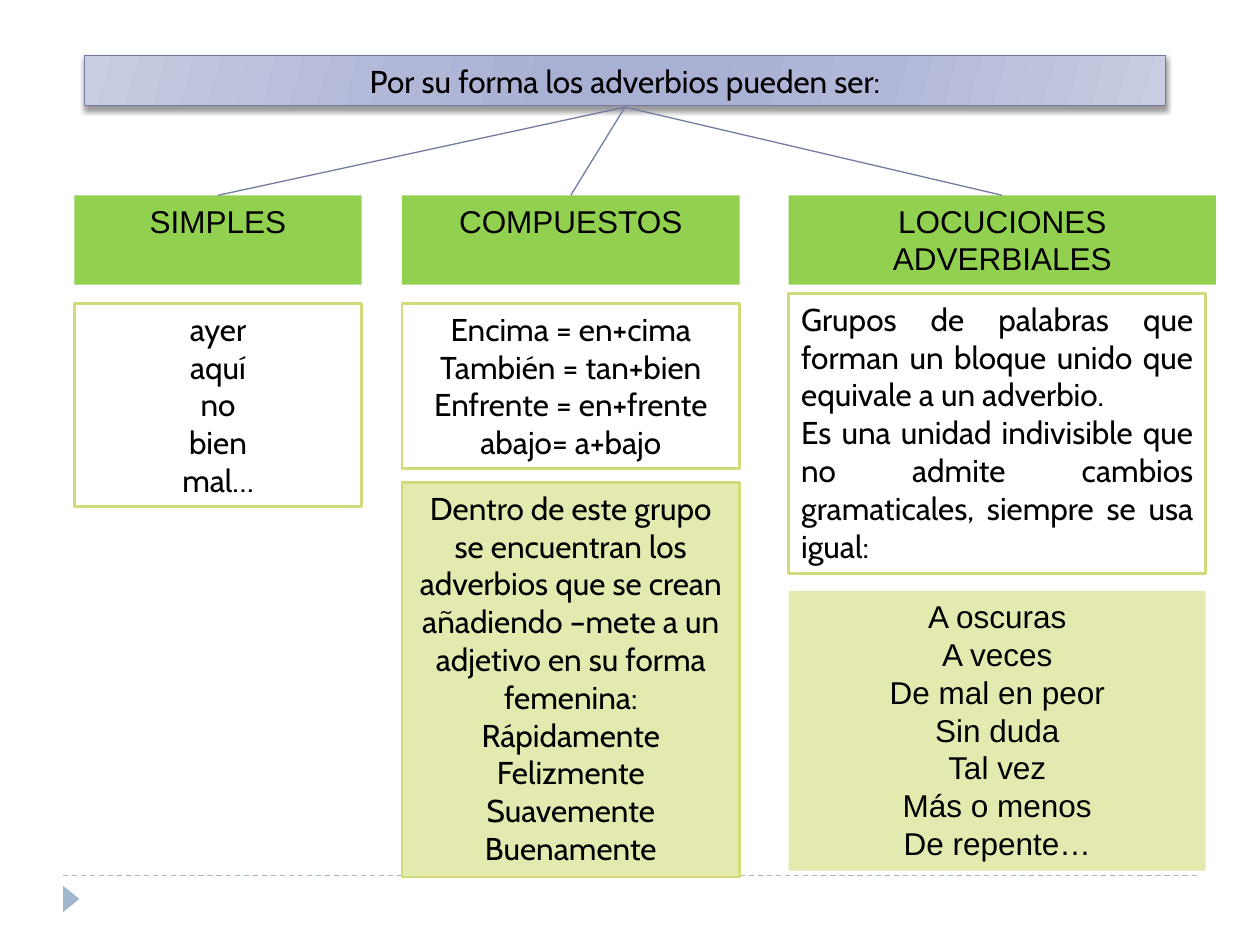
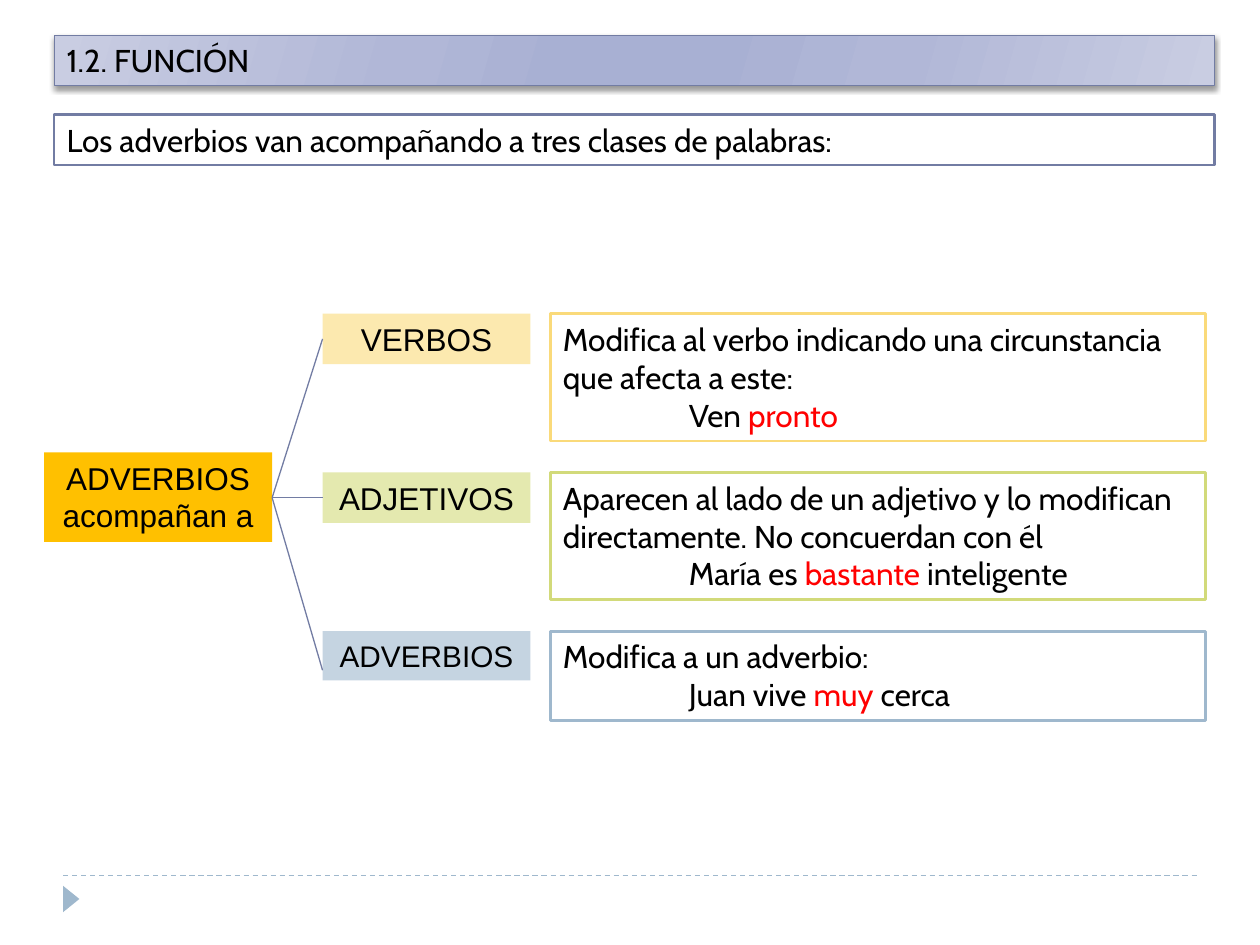
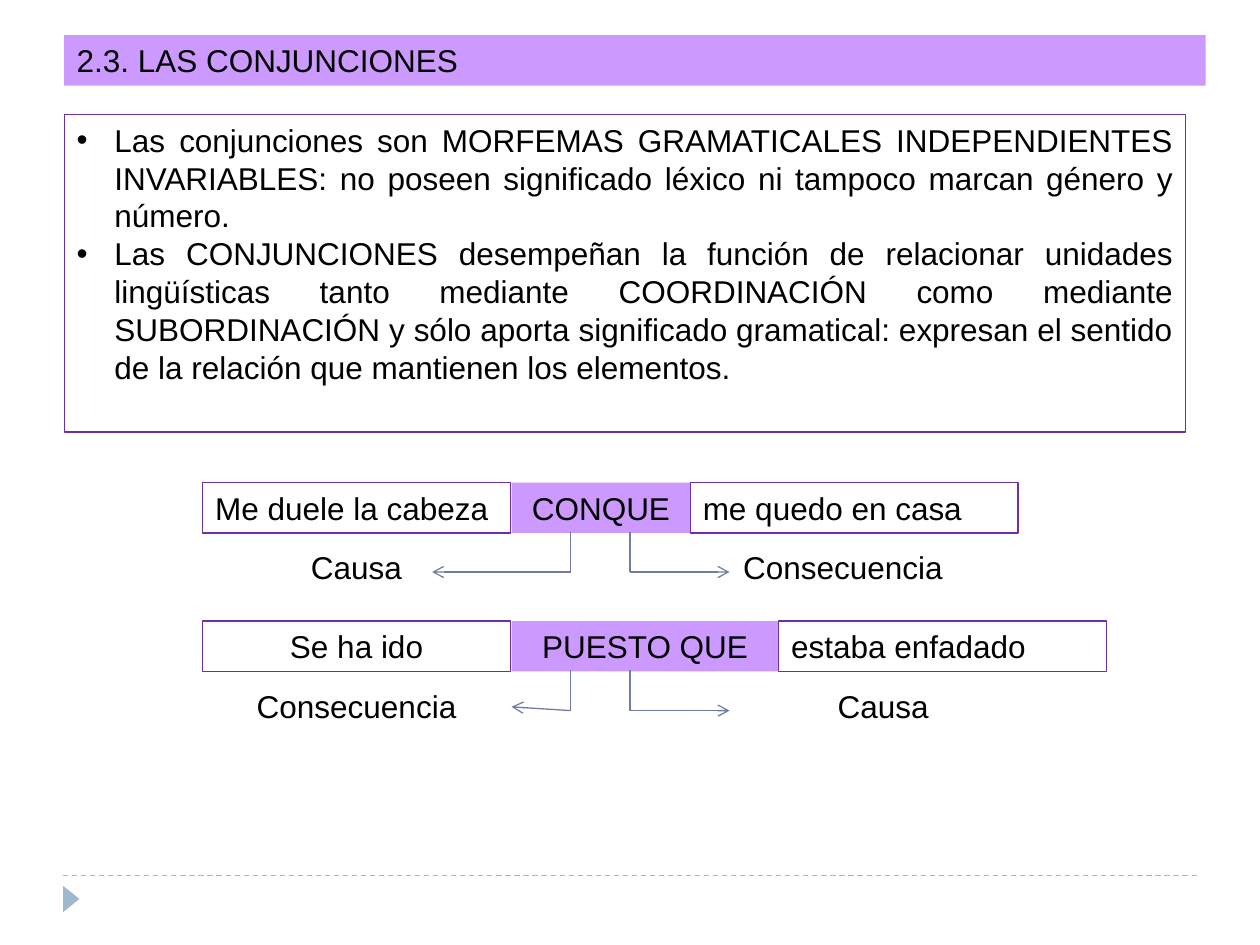
"""Build three grammar slides on adverbs and conjunctions."""
from dataclasses import dataclass

from lxml.etree import SubElement
from pptx import Presentation
from pptx.dml.color import RGBColor
from pptx.enum.dml import MSO_LINE
from pptx.enum.shapes import MSO_CONNECTOR, MSO_SHAPE
from pptx.enum.text import MSO_ANCHOR, PP_ALIGN
from pptx.oxml.ns import qn
from pptx.util import Inches, Pt


@dataclass(frozen=True)
class Theme:
    """Colours, fonts and type sizes shared by the slides."""
    ink: str = "000000"
    accent: str = "FF0000"
    white: str = "FFFFFF"
    slate: str = "727CA3"
    mist: str = "9FB8CD"
    pale_mist: str = "C5D4E1"
    green: str = "92D050"
    lime: str = "D2DA7A"
    pale_lime: str = "E4E9AF"
    gold: str = "FFC000"
    yellow: str = "FADA7A"
    pale_yellow: str = "FCE9AF"
    lilac: str = "CC99FF"
    purple: str = "7030A0"
    band: tuple = ((0, "C9CDE2"), (30, "B1B7D7"), (45, "A8B0D3"),
                   (55, "A8B0D3"), (73, "B1B7D7"), (100, "C9CDE2"))
    plain: str = "Arial"
    rounded: str = "Cabin"
    body: float = 18
    small: float = 17
    thin: float = 0.75
    thick: float = 1.5


def add_node(parent, tag, **attributes):
    """Append a drawing element with the given attributes."""
    node = SubElement(parent, qn(tag))
    for name, value in attributes.items():
        node.set(name, str(value))
    return node


def apply(target, formats):
    """Set each format value on the target."""
    for name, value in formats.items():
        setattr(target, name, value)


class Deck:
    """Hold the theme and the current slide, and draw its elements."""

    def __init__(self, theme):
        """Open an empty deck of 10 by 7.5 inches."""
        self.theme = theme
        self.presentation = Presentation()
        apply(self.presentation, {"slide_width": Inches(10), "slide_height": Inches(7.5)})

    def new_slide(self):
        """Start a slide with its footer rule and marker."""
        self.slide = self.presentation.slides.add_slide(self.presentation.slide_layouts[6])
        footer_rule = self.line((0.5, 6.95), (9.5, 6.95), self.theme.mist)
        footer_rule.line.dash_style = MSO_LINE.DASH
        marker = self.shape((0.46, 7.07, 0.21, 0.13), self.theme.mist,
                            kind=MSO_SHAPE.ISOSCELES_TRIANGLE)
        marker.rotation = 90

    def shape(self, area, fill=None, outline=None, weight=None, kind=MSO_SHAPE.RECTANGLE):
        """Draw a preset shape without a shadow."""
        shape = self.slide.shapes.add_shape(kind, *map(Inches, area))
        shape.shadow.inherit = False
        for paint, colour in ((shape.fill, fill), (shape.line.fill, outline)):
            if colour:
                paint.solid()
                paint.fore_color.rgb = RGBColor.from_string(colour)
            else:
                paint.background()
        if outline:
            shape.line.width = Pt(weight or self.theme.thick)
        return shape

    def put_text(self, shape, text, font, align, size=None):
        """Fill a shape with lines of text; words between asterisks are accented."""
        frame = shape.text_frame
        apply(frame, {"word_wrap": True, "vertical_anchor": MSO_ANCHOR.TOP})
        for number, words in enumerate(text.split("\n")):
            paragraph = frame.add_paragraph() if number else frame.paragraphs[0]
            paragraph.alignment = align
            for part, piece in enumerate(words.split("*")):
                if not piece:
                    continue
                run = paragraph.add_run()
                run.text = piece
                apply(run.font, {"name": font, "size": Pt(size or self.theme.body)})
                colour = self.theme.accent if part % 2 else self.theme.ink
                run.font.color.rgb = RGBColor.from_string(colour)
        return frame.paragraphs

    def label(self, area, text, fill=None, align=PP_ALIGN.CENTER, size=None):
        """Put plain text on an optional flat fill."""
        self.put_text(self.shape(area, fill), text, self.theme.plain, align, size)

    def card(self, area, text, outline, fill=None, align=PP_ALIGN.CENTER):
        """Put rounded text in an outlined card."""
        card = self.shape(area, fill or self.theme.white, outline)
        return self.put_text(card, text, self.theme.rounded, align)

    def frame(self, area, text, align=PP_ALIGN.LEFT):
        """Put plain text in a thin purple frame."""
        frame = self.shape(area, None, self.theme.purple, self.theme.thin)
        return self.put_text(frame, text, self.theme.plain, align)

    def band(self, area, text, align):
        """Draw a heading on a shaded band with a soft shadow."""
        band = self.shape(area, None, self.theme.slate, self.theme.thin)
        band.fill.gradient()
        properties = band._element.spPr
        stops = properties.find(".//" + qn("a:gsLst"))
        stops.clear()
        for position, colour in self.theme.band:
            stop = add_node(stops, "a:gs", pos=position * 1000)
            add_node(stop, "a:srgbClr", val=colour)
        properties.find(".//" + qn("a:lin")).set("ang", str(16 * 60000))
        shadow = add_node(properties.find(qn("a:effectLst")), "a:outerShdw", blurRad=Pt(3),
                          dist=Pt(2), dir=90 * 60000, rotWithShape=0)
        add_node(add_node(shadow, "a:srgbClr", val=self.theme.ink), "a:alpha", val=40000)
        self.put_text(band, text, self.theme.rounded, align)

    def line(self, start, end, colour=None, arrow=False):
        """Draw a thin straight line, with an arrowhead at its end if asked."""
        line = self.slide.shapes.add_connector(MSO_CONNECTOR.STRAIGHT,
                                               *map(Inches, (*start, *end)))
        line.line.color.rgb = RGBColor.from_string(colour or self.theme.slate)
        line.line.width = Pt(self.theme.thin)
        if arrow:
            add_node(line.line._get_or_add_ln(), "a:tailEnd", type="arrow")
        add_node(line._element.spPr, "a:effectLst")
        return line

    def indent(self, paragraph, left, first=0, bullet=None):
        """Indent a paragraph and give it an optional bullet."""
        properties = paragraph._p.get_or_add_pPr()
        properties.set("marL", str(Inches(left)))
        properties.set("indent", str(Inches(first)))
        if bullet:
            add_node(properties, "a:buFont", typeface=self.theme.plain)
            add_node(properties, "a:buChar", char=bullet)


def forms_slide(deck):
    """Show the three forms of adverbs."""
    theme = deck.theme
    deck.new_slide()
    deck.band((0.67, 0.44, 8.58, 0.4), "Por su forma los adverbios pueden ser:", PP_ALIGN.CENTER)
    for heading, left, width in (("SIMPLES", 0.59, 2.28), ("COMPUESTOS", 3.19, 2.68),
                                 ("LOCUCIONES ADVERBIALES", 6.26, 3.39)):
        deck.label((left, 1.55, width, 0.71), heading, theme.green)
        deck.line((4.96, 0.85), (left + width / 2, 1.55))
    deck.card((0.59, 2.41, 2.28, 1.61), "ayer\naquí\nno\nbien\nmal…", theme.lime)
    deck.card((3.19, 2.41, 2.68, 1.31),
              "Encima = en+cima\nTambién = tan+bien\nEnfrente = en+frente\nabajo= a+bajo",
              theme.lime)
    deck.card((3.19, 3.83, 2.68, 3.13),
              "Dentro de este grupo se encuentran los adverbios que se crean añadiendo "
              "–mete a un adjetivo en su forma femenina:\n"
              "Rápidamente\nFelizmente\nSuavemente\nBuenamente", theme.lime, theme.pale_lime)
    deck.card((6.26, 2.33, 3.31, 2.22),
              "Grupos de palabras que forman un bloque unido que equivale a un adverbio.\n"
              "Es una unidad indivisible que no admite cambios gramaticales, "
              "siempre se usa igual:", theme.lime, align=PP_ALIGN.JUSTIFY)
    deck.label((6.26, 4.69, 3.31, 2.22),
               "A oscuras\nA veces\nDe mal en peor\nSin duda\nTal vez\nMás o menos\nDe repente…",
               theme.pale_lime)


def function_slide(deck):
    """Show the word classes that adverbs accompany."""
    theme = deck.theme
    deck.new_slide()
    deck.band((0.43, 0.28, 9.21, 0.4), "1.2. FUNCIÓN", PP_ALIGN.LEFT)
    deck.card((0.43, 0.91, 9.21, 0.4), "Los adverbios van acompañando a tres clases de palabras:",
              theme.slate, align=PP_ALIGN.LEFT)
    deck.label((0.35, 3.59, 1.81, 0.71), "ADVERBIOS\nacompañan a", theme.gold)
    word_classes = (
        ("VERBOS", theme.pale_yellow, theme.yellow, theme.body, 0.4, 1.01, 2.69,
         "Modifica al verbo indicando una circunstancia que afecta a este:\nVen *pronto*"),
        ("ADJETIVOS", theme.pale_lime, theme.lime, theme.body, 0.4, 1.01, 3.95,
         "Aparecen al lado de un adjetivo y lo modifican directamente. No concuerdan con él\n"
         "María es *bastante* inteligente"),
        ("ADVERBIOS", theme.pale_mist, theme.mist, theme.small, 0.39, 0.71, 5.32,
         "Modifica a un adverbio:\nJuan vive *muy* cerca"),
    )
    for row, (name, fill, outline, size, name_height, use_height, joint, use) in enumerate(
            word_classes):
        top = 2.49 + 1.26 * row
        deck.label((2.56, top, 1.65, name_height), name, fill, size=size)
        use_lines = deck.card((4.37, top, 5.2, use_height), use, outline, align=PP_ALIGN.LEFT)
        deck.indent(use_lines[-1], 1)
        deck.line((2.16, 3.95), (2.56, joint))


def conjunctions_slide(deck):
    """Define conjunctions and take two sentences apart."""
    theme = deck.theme
    deck.new_slide()
    deck.label((0.51, 0.28, 9.06, 0.4), "2.3. LAS CONJUNCIONES", theme.lilac, PP_ALIGN.LEFT)
    definitions = deck.frame(
        (0.51, 0.91, 8.9, 2.52),
        "Las conjunciones son MORFEMAS GRAMATICALES INDEPENDIENTES INVARIABLES: "
        "no poseen significado léxico ni tampoco marcan género y número.\n"
        "Las CONJUNCIONES desempeñan la función de relacionar unidades lingüísticas "
        "tanto mediante COORDINACIÓN como mediante SUBORDINACIÓN y sólo aporta significado "
        "gramatical: expresan el sentido de la relación que mantienen los elementos.",
        PP_ALIGN.JUSTIFY)
    for definition in definitions:
        deck.indent(definition, 0.3, -0.3, "•")
    sentences = (
        ("Me duele la cabeza", PP_ALIGN.LEFT, "CONQUE", 1.42, "me quedo en casa",
         "Causa", "Consecuencia", 5.47, (3.43, 4.54)),
        ("Se ha ido", PP_ALIGN.CENTER, "PUESTO QUE", 2.12, "estaba enfadado",
         "Consecuencia", "Causa", 5.79, (4.06, 5.61)),
    )
    for row, (opening, align, link, link_width, ending, opening_role, ending_role,
              role_left, arrow_tip) in enumerate(sentences):
        top = 3.83 + 1.1 * row
        elbow = top + 0.71
        deck.frame((1.61, top, 2.44, 0.4), opening, align)
        deck.label((4.06, top, link_width, 0.4), link, theme.lilac)
        deck.frame((4.06 + link_width, top, 2.6, 0.4), ending)
        deck.label((1.61, top + 0.47, 2.44, 0.4), opening_role)
        deck.label((role_left, top + 0.47, 2.44, 0.4), ending_role)
        for stem, tip in ((4.53, arrow_tip), (5, (5.79, elbow))):
            deck.line((stem, top + 0.39), (stem, elbow))
            deck.line((stem, elbow), tip, arrow=True)


def main():
    """Build and save the deck."""
    deck = Deck(Theme())
    for build in (forms_slide, function_slide, conjunctions_slide):
        build(deck)
    deck.presentation.save("out.pptx")


if __name__ == "__main__":
    main()
